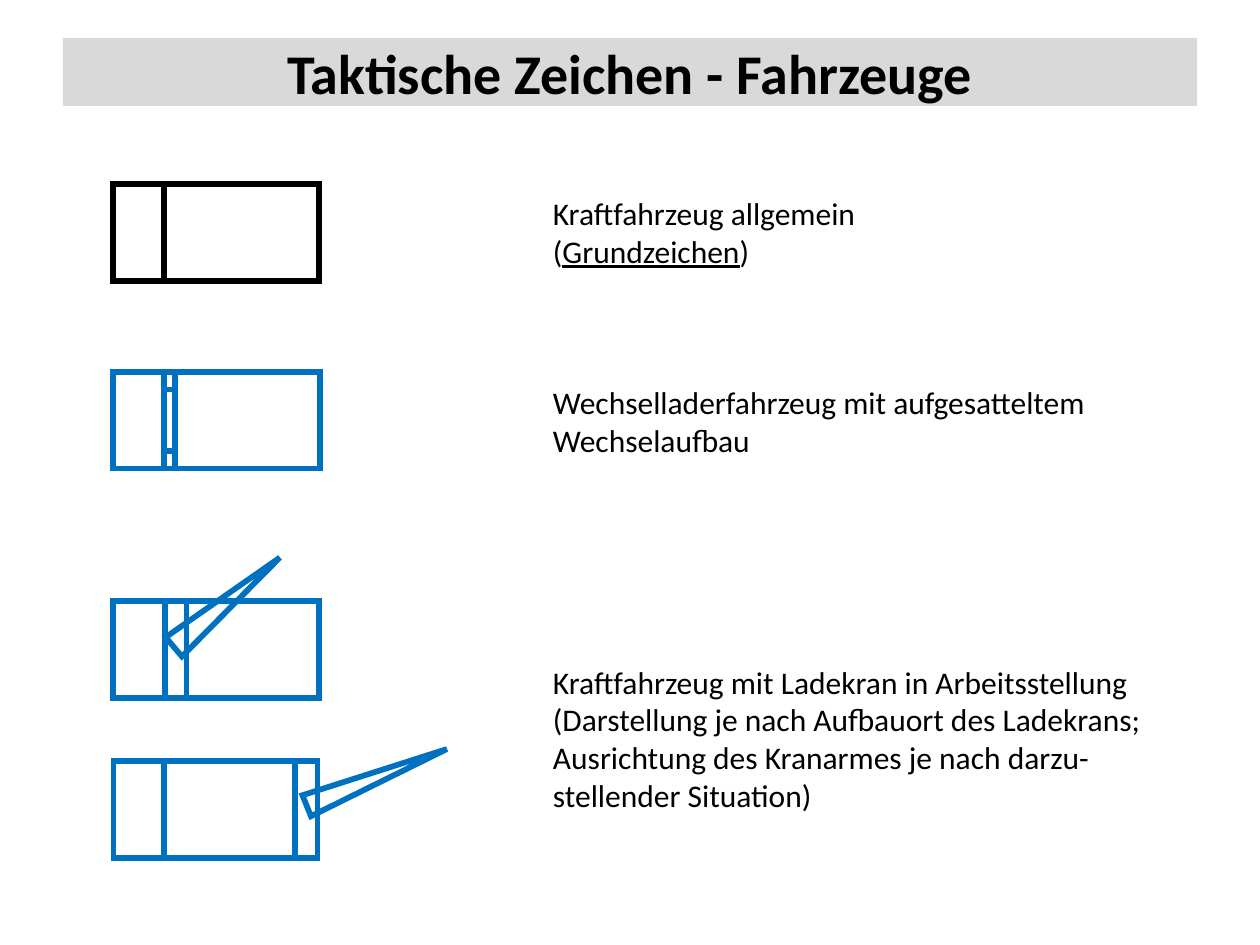
from dataclasses import dataclass

from lxml import etree
from pptx import Presentation
from pptx.dml.color import RGBColor
from pptx.enum.shapes import MSO_CONNECTOR, MSO_SHAPE
from pptx.enum.text import MSO_ANCHOR, PP_ALIGN
from pptx.oxml.ns import qn
from pptx.util import Inches, Pt

RECT, TRIANGLE = MSO_SHAPE.RECTANGLE, MSO_SHAPE.ISOSCELES_TRIANGLE
STRAIGHT = MSO_CONNECTOR.STRAIGHT
MIDDLE, CENTER = MSO_ANCHOR.MIDDLE, PP_ALIGN.CENTER
WIDTH, HEIGHT = Inches(10), Inches(7.5)
COL, ROW = WIDTH / 100, HEIGHT / 75


@dataclass(frozen=True)
class Theme:
    font: str = "Calibri"
    black: RGBColor = RGBColor(0, 0, 0)
    white: RGBColor = RGBColor(255, 255, 255)
    grey: RGBColor = RGBColor(0xD9, 0xD9, 0xD9)
    blue: RGBColor = RGBColor(0x00, 0x70, 0xC0)
    title: Pt = Pt(32)
    body: Pt = Pt(18)
    stroke: Pt = Pt(3.25)


@dataclass(frozen=True)
class Box:
    col: float
    row: float
    cols: float
    rows: float

    def emu(self) -> tuple[int, int, int, int]:
        return (round(self.col * COL), round(self.row * ROW),
                round(self.cols * COL), round(self.rows * ROW))


@dataclass(frozen=True)
class Crane:
    box: Box
    angle: float


@dataclass(frozen=True)
class Vehicle:
    row: float
    cols: float
    dividers: tuple[float, ...]
    color: RGBColor
    fill: RGBColor | None = None
    coupling: Box | None = None
    crane: Crane | None = None


@dataclass(frozen=True)
class Caption:
    row: float
    cols: float
    rows: float
    lines: tuple[str, ...]


T = Theme()
VEHICLE_COL, VEHICLE_ROWS, CAPTION_COL = 9, 7.7, 42.9
UNDERLINED = "Grundzeichen"

VEHICLES = (
    Vehicle(14.6, 16.3, (13,), T.black, fill=T.white),
    Vehicle(29.5, 16.4, (13, 13.9), T.blue, coupling=Box(13, 30.9, 0.9, 4.9)),
    Vehicle(47.7, 16.3, (13.1, 14.8), T.blue,
            crane=Crane(Box(17, 42.3, 2, 11), 49.9)),
    Vehicle(60.4, 16.2, (13, 23.4), T.blue,
            crane=Crane(Box(29, 55.7, 1.8, 12), 68)),
)
CAPTIONS = (
    Caption(14.9, 26.4, 7.1, ("Kraftfahrzeug allgemein", "(Grundzeichen)")),
    Caption(29.9, 44.8, 7.1, ("Wechselladerfahrzeug mit aufgesatteltem",
                              "Wechselaufbau")),
    Caption(52.1, 49.2, 13.1, ("Kraftfahrzeug mit Ladekran in Arbeitsstellung",
                               "(Darstellung je nach Aufbauort des Ladekrans;",
                               "Ausrichtung des Kranarmes je nach darzu-",
                               "stellender Situation)")),
)


def add_outline(s, kind, box: Box, color: RGBColor, fill: RGBColor | None = None):
    sp = s.shapes.add_shape(kind, *box.emu())
    sp.shadow.inherit = False
    if fill is None:
        sp.fill.background()
    else:
        sp.fill.solid()
        sp.fill.fore_color.rgb = fill
    sp.line.color.rgb = color
    sp.line.width = T.stroke
    ln = sp._element.spPr.find(qn("a:ln"))
    etree.SubElement(ln, qn("a:miter"), lim="800000")
    return sp


def add_divider(s, col: float, row: float, color: RGBColor) -> None:
    x, y, _, h = Box(col, row, 0, VEHICLE_ROWS).emu()
    line = s.shapes.add_connector(STRAIGHT, x, y, x, y + h)
    line.line.color.rgb = color
    line.line.width = T.stroke
    etree.SubElement(line._element.spPr, qn("a:effectLst"))


def add_vehicle(s, v: Vehicle) -> None:
    body = Box(VEHICLE_COL, v.row, v.cols, VEHICLE_ROWS)
    add_outline(s, RECT, body, v.color, v.fill)
    for col in v.dividers:
        add_divider(s, col, v.row, v.color)
    if v.coupling:
        add_outline(s, RECT, v.coupling, v.color)
    if v.crane:
        arm = add_outline(s, TRIANGLE, v.crane.box, v.color)
        arm.rotation = v.crane.angle


def add_caption(s, c: Caption) -> None:
    box = Box(CAPTION_COL, c.row, c.cols, c.rows)
    tf = s.shapes.add_textbox(*box.emu()).text_frame
    tf.word_wrap = False
    p = tf.paragraphs[0]
    p.font.name, p.font.size, p.font.color.rgb = T.font, T.body, T.black
    for i, text in enumerate(c.lines):
        if i:
            p.add_line_break()
        before, marked, after = text.partition(UNDERLINED)
        for part in filter(None, (before, marked, after)):
            r = p.add_run()
            r.text = part
            if part == UNDERLINED:
                r.font.underline = True


def add_title(s, text: str) -> None:
    sp = s.shapes.add_shape(RECT, *Box(5, 3, 90, 5.4).emu())
    sp.shadow.inherit = False
    sp.fill.solid()
    sp.fill.fore_color.rgb = T.grey
    sp.line.fill.background()
    tf = sp.text_frame
    tf.word_wrap = True
    tf.vertical_anchor = MIDDLE
    p = tf.paragraphs[0]
    p.text = text
    p.alignment = CENTER
    p.font.name, p.font.size, p.font.color.rgb = T.font, T.title, T.black
    p.font.bold = True


def main() -> None:
    prs = Presentation()
    prs.slide_width, prs.slide_height = WIDTH, HEIGHT
    s = prs.slides.add_slide(prs.slide_layouts[6])
    add_title(s, "Taktische Zeichen - Fahrzeuge")
    for vehicle in VEHICLES:
        add_vehicle(s, vehicle)
    for caption in CAPTIONS:
        add_caption(s, caption)
    prs.save("out.pptx")


if __name__ == "__main__":
    main()
